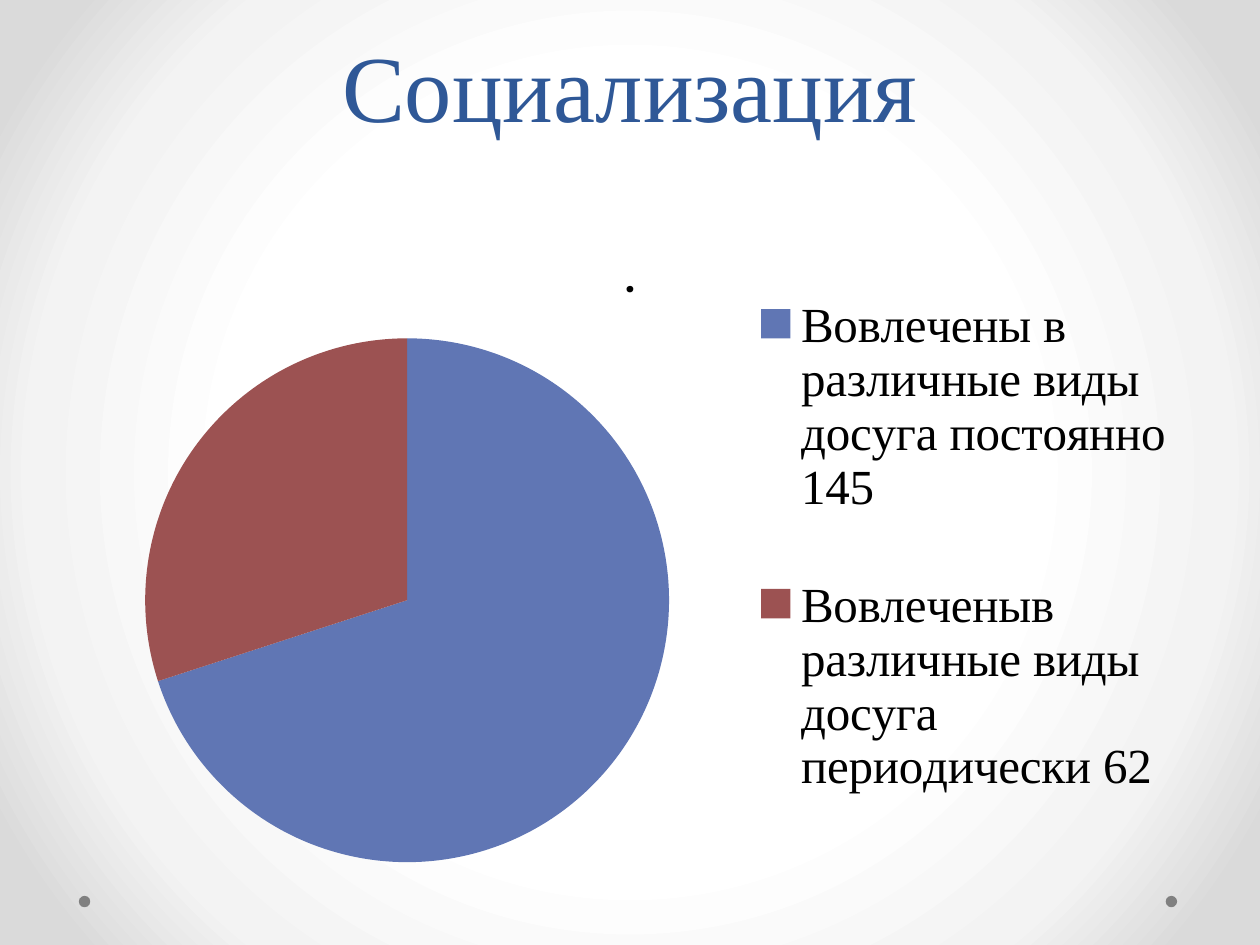
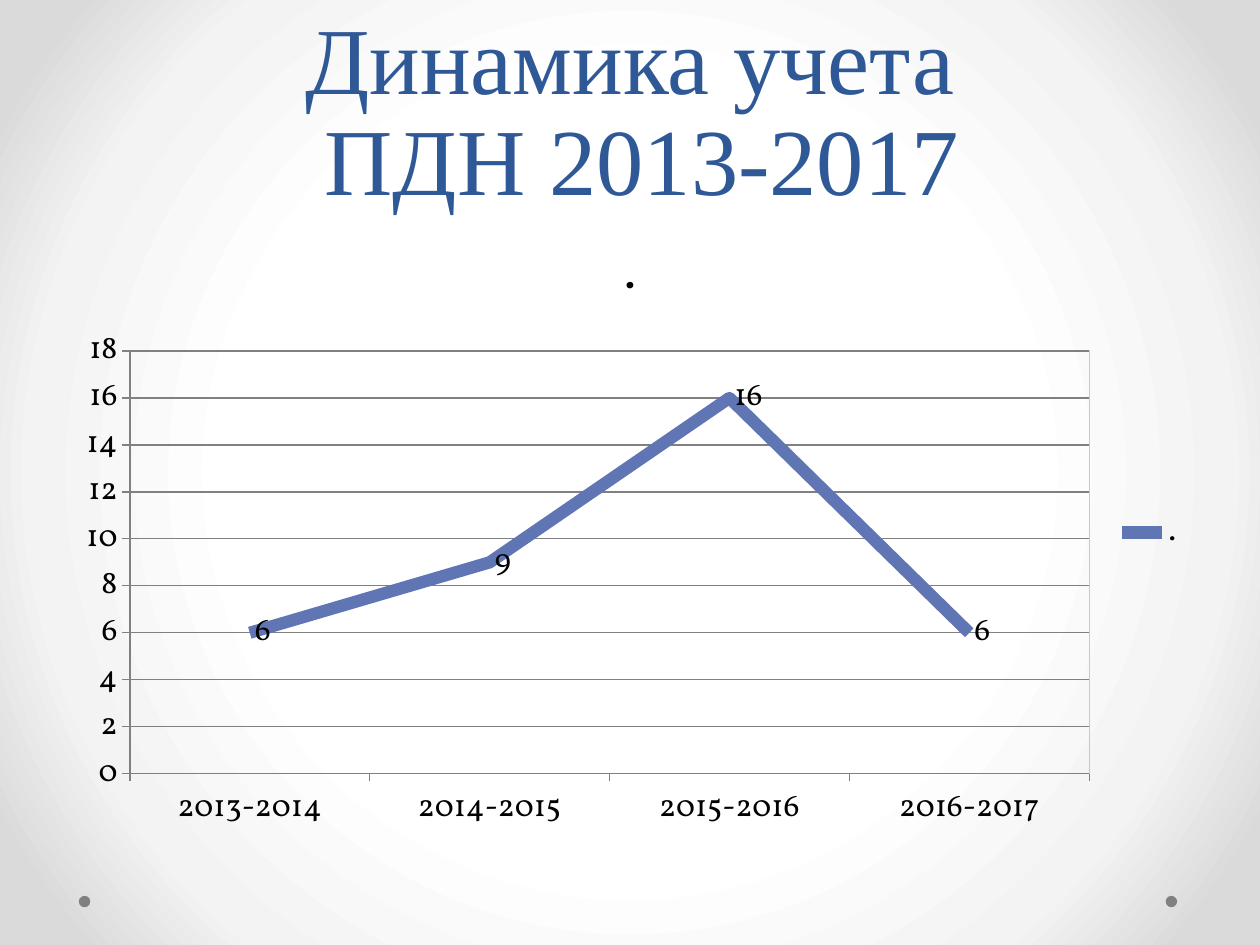
"""Build two slides: a pie chart on socialization and a line chart on yearly records."""
from lxml.etree import SubElement
from pptx import Presentation
from pptx.chart.data import CategoryChartData
from pptx.dml.color import RGBColor
from pptx.enum.chart import XL_CHART_TYPE as ChartType, XL_LABEL_POSITION as LabelPosition
from pptx.enum.chart import XL_LEGEND_POSITION as LegendPosition, XL_MARKER_STYLE as Marker
from pptx.enum.chart import XL_TICK_MARK as TickMark
from pptx.enum.shapes import MSO_SHAPE as Shape
from pptx.enum.text import MSO_ANCHOR as Anchor, PP_ALIGN as Align
from pptx.oxml.ns import qn
from pptx.util import Cm, Pt

BLUE = RGBColor(0x60, 0x76, 0xB4)
RED = RGBColor(0x9C, 0x52, 0x52)
TITLE_BLUE = RGBColor(0x2F, 0x58, 0x97)
BORDER_BLUE = RGBColor(0xBF, 0xC8, 0xE1)
GRAY = RGBColor(0x80, 0x80, 0x80)
BLACK = RGBColor(0, 0, 0)
BACKGROUND_STOPS = [(50, RGBColor(0xFF, 0xFF, 0xFF)), (76, RGBColor(0xF3, 0xF3, 0xF3)),
                    (92, RGBColor(0xDA, 0xDA, 0xDA))]
TITLE_FONT = "Times New Roman"
CHART_FONT = "Vollkorn"
LEFT, WIDTH = Cm(1.27), Cm(22.86)


def place(parent, index, percents, inner=False):
    """Give a chart part a fixed place in percents of the chart."""
    for old in parent.findall(qn("c:layout")):
        parent.remove(old)
    layout = SubElement(parent, qn("c:layout"))
    manual = SubElement(layout, qn("c:manualLayout"))
    values = [("layoutTarget", "inner")] if inner else []
    values += [("xMode", "edge"), ("yMode", "edge")]
    values += [(name, percent / 100) for name, percent in zip("xywh", percents)]
    for name, value in values:
        SubElement(manual, qn(f"c:{name}")).set("val", str(value))
    parent.insert(index, layout)


def add_page(title, title_top, chart_type, values, chart_top, chart_height, plot_place):
    """Add a slide with its title, corner dots and chart, and return the chart."""
    page = deck.slides.add_slide(deck.slide_layouts[6])
    for dot_left in (1.59, 23.5):
        dot = page.shapes.add_shape(Shape.OVAL, Cm(dot_left), Cm(18.06), Cm(0.23), Cm(0.23))
        dot.shadow.inherit = False
        dot.fill.solid()
        dot.fill.fore_color.rgb = GRAY
        dot.line.fill.background()

    box = page.shapes.add_textbox(LEFT, Cm(title_top), WIDTH, Cm(4.45))
    box.text_frame.word_wrap = True
    box.text_frame.vertical_anchor = Anchor.BOTTOM
    para = box.text_frame.paragraphs[0]
    para.text = title
    para.alignment = Align.CENTER
    para.line_spacing = Pt(58)
    for span in para.runs:
        span.font.name = TITLE_FONT
        span.font.size = Pt(54)
        span.font.color.rgb = TITLE_BLUE

    data = CategoryChartData()
    data.categories = list(values)
    data.add_series(".", list(values.values()))
    chart = page.shapes.add_chart(
        chart_type, LEFT, Cm(chart_top), WIDTH, Cm(chart_height), data).chart
    chart.font.name = CHART_FONT
    chart.font.size = Pt(18)
    chart.font.color.rgb = BLACK
    chart.has_title = True
    chart.chart_title.text_frame.text = "."
    span = chart.chart_title.text_frame.paragraphs[0].runs[0]
    span.font.name = CHART_FONT
    span.font.size = Pt(21.6)
    span.font.bold = True
    span.font.color.rgb = BLACK
    chart.has_legend = True
    chart.legend.position = LegendPosition.RIGHT
    chart.legend.include_in_layout = False
    place(chart.element.find(f".//{qn('c:plotArea')}"), 0, plot_place, inner=True)
    return chart


deck = Presentation()
deck.slide_width, deck.slide_height = Cm(25.4), Cm(19.05)

deck.slide_master.background.fill.gradient()
gradient = deck.slide_master.element.find(f".//{qn('p:bg')}//{qn('a:gradFill')}")
for child in list(gradient):
    gradient.remove(child)
stops = SubElement(gradient, qn("a:gsLst"))
for position, color in BACKGROUND_STOPS:
    stop = SubElement(stops, qn("a:gs"), pos=str(position * 1000))
    SubElement(stop, qn("a:srgbClr"), val=str(color))
circle = SubElement(gradient, qn("a:path"), path="circle")
SubElement(circle, qn("a:fillToRect"), l="50000", t="50000", r="50000", b="50000")

leisure = {"Вовлечены в различные виды досуга постоянно 145": 70,
           "Вовлеченыв различные виды досуга периодически 62": 30}
pie = add_page("Социализация", -1.47, ChartType.PIE, leisure, 4.52, 13.21,
               (7.25, 17.4, 46.2, 80))
pie.plots[0].vary_by_categories = True
for index, color in enumerate((BLUE, RED)):
    fill = pie.plots[0].series[0].points[index].format.fill
    fill.solid()
    fill.fore_color.rgb = color
pie.legend.font.name = TITLE_FONT
pie.legend.font.size = Pt(28)
pie.legend.font.color.rgb = BLACK
place(pie.element.find(f".//{qn('c:legend')}"), 1, (60.4, 1.6, 38, 95.3))

records = {"2013-2014": 6, "2014-2015": 9, "2015-2016": 16, "2016-2017": 6}
trend = add_page("Динамика учета\v ПДН 2013-2017", 0, ChartType.LINE, records, 4.45, 12.57,
                 (5.9, 20.9, 84.6, 67.8))
trend.plots[0].vary_by_categories = False
series = trend.plots[0].series[0]
series.smooth = False
series.marker.style = Marker.NONE
series.format.line.color.rgb = BLUE
series.format.line.width = Pt(7)
labels = series.data_labels
labels.show_value = True
labels.position = LabelPosition.RIGHT

scale = trend.value_axis
scale.minimum_scale, scale.maximum_scale, scale.major_unit = 0, 18, 2
scale.has_major_gridlines = True
for axis in (scale, trend.category_axis):
    axis.major_tick_mark = TickMark.OUTSIDE
    axis.minor_tick_mark = TickMark.NONE
for lined in (scale, trend.category_axis, scale.major_gridlines):
    lined.format.line.color.rgb = GRAY
    lined.format.line.width = Pt(0.75)

plot_area = trend.element.find(f".//{qn('c:plotArea')}")
border = SubElement(SubElement(plot_area, qn("c:spPr")), qn("a:ln"), w=str(Pt(0.75)))
SubElement(SubElement(border, qn("a:solidFill")), qn("a:srgbClr"), val=str(BORDER_BLUE))

deck.save("out.pptx")
